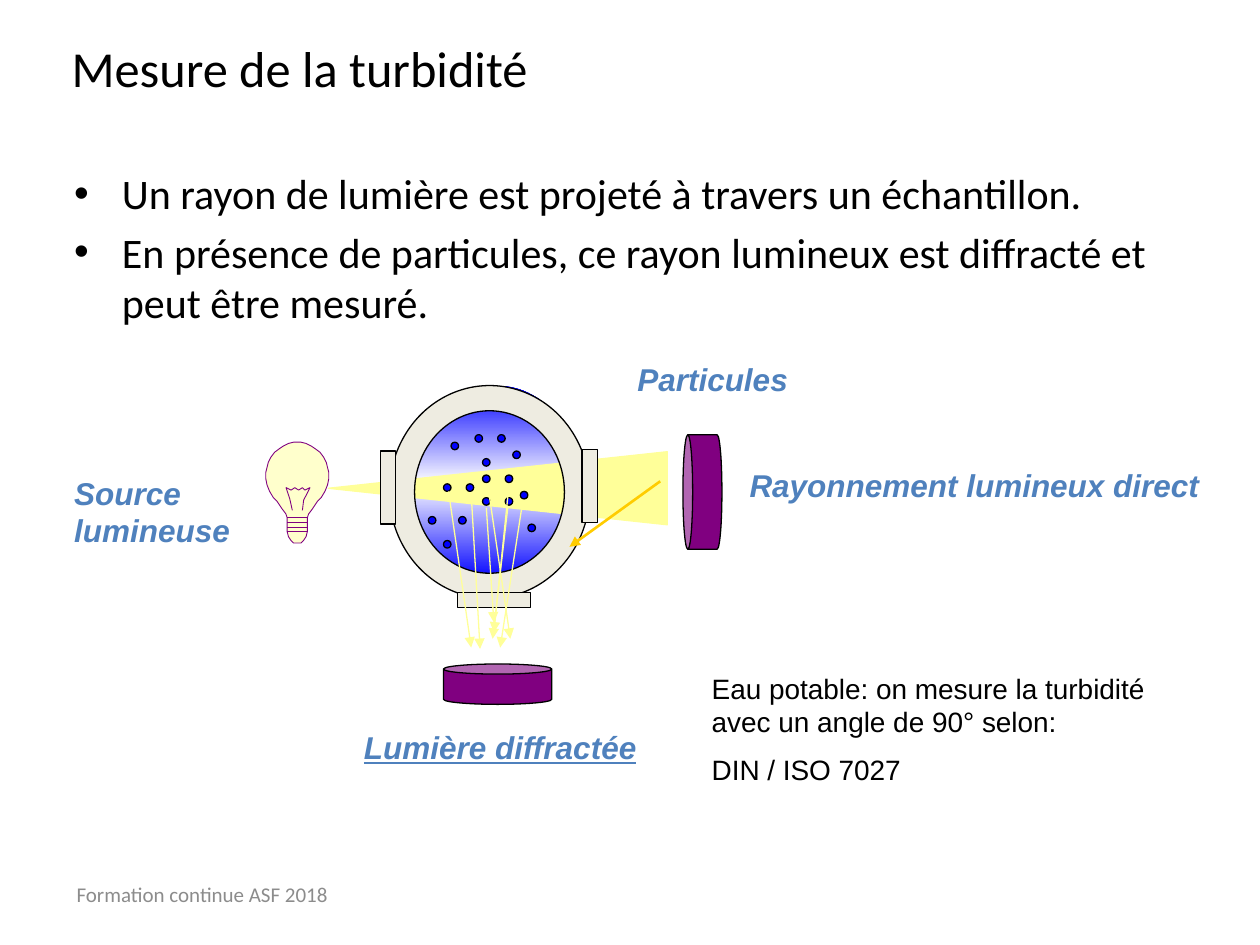
from copy import deepcopy

from lxml import etree
from pptx import Presentation
from pptx.dml.color import RGBColor
from pptx.enum import shapes, text
from pptx.oxml.ns import qn
from pptx.util import Inches, Pt

BLACK = RGBColor(0, 0, 0)
WHITE = RGBColor(255, 255, 255)
BLUE = RGBColor(0, 0, 255)
LABEL_BLUE = RGBColor(0x4F, 0x81, 0xBD)
GREY = RGBColor(0x8C, 0x8C, 0x8C)
BEIGE = RGBColor(0xEE, 0xEC, 0xE1)
LIGHT = RGBColor(0xFF, 0xFF, 0x99)
GLASS = RGBColor(0xFF, 0xFF, 0xCC)
PURPLE = RGBColor(0x80, 0, 0x80)
AMBER = RGBColor(0xFF, 0xCC, 0)
KIND = shapes.MSO_SHAPE


def add_text(slide, box, paragraphs, size, color, font="Arial", anchor=text.MSO_ANCHOR.TOP,
             wrap=True, bullet=False, gap=0, **style):
    frame = slide.shapes.add_textbox(*map(Inches, box)).text_frame
    frame.word_wrap = wrap
    frame.vertical_anchor = anchor
    for index, words in enumerate(paragraphs):
        paragraph = frame.paragraphs[0] if index == 0 else frame.add_paragraph()
        if index:
            paragraph.space_before = Pt(gap)
        if bullet:
            props = paragraph._p.get_or_add_pPr()
            props.set("marL", str(Inches(0.38)))
            props.set("indent", str(-Inches(0.38)))
            etree.SubElement(props, qn("a:buFont")).set("typeface", "Arial")
            etree.SubElement(props, qn("a:buChar")).set("char", "•")
        paragraph.text = words
        for run in paragraph.runs:
            run.font.name = font
            run.font.size = Pt(size)
            run.font.color.rgb = color
            for name, value in style.items():
                setattr(run.font, name, value)


def add_label(slide, left, top, width, height, words, underline=False):
    add_text(slide, (left, top, width, height), [words], 18, LABEL_BLUE,
             wrap=False, bold=True, italic=True, underline=underline)


def paint(shape, fill, line=BLACK, weight=0.75):
    shape.shadow.inherit = False
    if fill is None:
        shape.fill.background()
    else:
        shape.fill.solid()
        shape.fill.fore_color.rgb = fill
    shape.line.color.rgb = line
    shape.line.width = Pt(weight)


def add_shape(slide, kind, box, fill, line=BLACK, rotation=0):
    shape = slide.shapes.add_shape(kind, *map(Inches, box))
    paint(shape, fill, line)
    shape.rotation = rotation
    return shape


def add_arrow(slide, start, end, color, weight=0.75):
    arrow = slide.shapes.add_connector(shapes.MSO_CONNECTOR.STRAIGHT, *map(Inches, (*start, *end)))
    arrow.line.color.rgb = color
    arrow.line.width = Pt(weight)
    etree.SubElement(arrow.line._get_or_add_ln(), qn("a:tailEnd")).set("type", "triangle")
    etree.SubElement(arrow._element.spPr, qn("a:effectLst"))


def add_sample(slide, left, top, width, height):
    sample = slide.shapes.add_shape(KIND.OVAL, *map(Inches, (left, top, width, height)))
    sample.shadow.inherit = False
    sample.line.fill.background()
    sample.fill.gradient()
    sample.fill.gradient_angle = 90
    stop_list = next(sample._element.iter(qn("a:gsLst")))
    stop_list.append(deepcopy(stop_list[0]))
    for stop, position, color in zip(sample.fill.gradient_stops, (0, 0.5, 1), (BLUE, WHITE, BLUE)):
        stop.position = position
        stop.color.rgb = color


def draw_cell(slide, left, top, width, height):
    add_sample(slide, left + 0.19, top, 1.32, 1.55)
    add_shape(slide, KIND.ISOSCELES_TRIANGLE, (left + 0.57, top - 0.53, 0.58, 2.69),
              LIGHT, LIGHT, 270)
    ring = add_shape(slide, KIND.DONUT, (left, top, width, height), BEIGE)
    ring.adjustments[0] = 0.126
    thick, long = 0.12, 0.58
    for x, y, w, h in ((-0.07, 0.52, thick, long), (1.53, 0.51, thick, long),
                       (0.54, 1.64, long, thick)):
        add_shape(slide, KIND.RECTANGLE, (left + x, top + y, w, h), BEIGE)


def draw_particles(slide, left, top):
    rows = {0.39: (0.68, 0.86), 0.45: (0.49,), 0.52: (0.98,), 0.58: (0.74,),
            0.71: (0.74, 0.92), 0.78: (0.43, 0.61), 0.84: (1.04,), 0.89: (0.74, 0.92),
            1.04: (0.31, 0.55), 1.1: (1.1,), 1.23: (0.43,)}
    for y, columns in rows.items():
        for x in columns:
            add_shape(slide, KIND.FLOWCHART_CONNECTOR, (left + x, top + y, 0.06, 0.06), BLUE)


def draw_scattered_rays(slide, left, top):
    rays = ((0.47, 0.84, 0.65, 2.08), (0.65, 0.86, 0.72, 2.09), (1.06, 0.91, 0.88, 2.08),
            (0.94, 0.97, 0.82, 2.01), (0.77, 0.97, 0.83, 1.88), (0.95, 0.79, 0.83, 1.96),
            (0.78, 0.78, 0.96, 2.01))
    for x1, y1, x2, y2 in rays:
        add_arrow(slide, (left + x1, top + y1), (left + x2, top + y2), LIGHT)


def add_outline(slide, points, fill=None, closed=False):
    corners = [(Inches(x), Inches(y)) for x, y in points]
    builder = slide.shapes.build_freeform(*corners[0], scale=1.0)
    builder.add_line_segments(corners[1:], close=closed)
    paint(builder.convert_to_shape(), fill, PURPLE, 0.5)


def draw_bulb(slide, left, top, width):
    middle = left + width / 2
    profile = ((0.03, 0), (0.07, 0.01), (0.11, 0.03), (0.14, 0.05), (0.18, 0.08), (0.21, 0.12),
               (0.23, 0.16), (0.24, 0.2), (0.25, 0.24), (0.25, 0.29), (0.24, 0.34),
               (0.22, 0.39), (0.19, 0.44), (0.16, 0.47), (0.12, 0.53), (0.09, 0.57),
               (0.08, 0.6), (0.08, 0.71), (0.07, 0.75), (0.05, 0.78), (0.03, 0.8))
    right = [(middle + x, top + y) for x, y in profile]
    mirrored = [(middle - x, top + y) for x, y in reversed(profile)]
    add_outline(slide, right + mirrored, GLASS, True)
    filament = ((-0.04, 0.54), (-0.06, 0.45), (-0.09, 0.36), (-0.05, 0.38), (-0.02, 0.36),
                (0.01, 0.38), (0.04, 0.36), (0.06, 0.38), (0.1, 0.36), (0.05, 0.46), (0.04, 0.54))
    add_outline(slide, [(middle + x, top + y) for x, y in filament])
    for y in (0.6, 0.64, 0.68, 0.71):
        add_outline(slide, [(middle - 0.08, top + y), (middle + 0.08, top + y)])


def draw_detector(slide, left, top, width, height, rotation=0):
    add_shape(slide, KIND.CAN, (left, top, width, height), PURPLE,
              rotation=rotation).adjustments[0] = 0.25


def draw_apparatus(slide, left, top):
    draw_cell(slide, left, top, 1.59, 1.69)
    draw_particles(slide, left, top)
    draw_scattered_rays(slide, left, top)
    draw_bulb(slide, left - 0.98, top + 0.45, 0.5)
    draw_detector(slide, left + 0.43, top + 2.21, 0.86, 0.32)
    draw_detector(slide, left + 2.03, top + 0.69, 0.91, 0.31, 270)
    add_label(slide, left - 2.6, top + 0.65, 1.45, 0.71, "Source\vlumineuse")
    add_label(slide, left - 0.3, top + 2.67, 2.39, 0.4, "Lumière diffractée", underline=True)
    add_label(slide, left + 2.76, top + 0.59, 3.81, 0.4, "Rayonnement lumineux direct")
    add_label(slide, left + 1.87, top - 0.25, 1.46, 0.4, "Particules")
    add_arrow(slide, (left + 2.15, top + 0.76), (left + 1.43, top + 1.28), AMBER, 1.5)


def main():
    deck = Presentation()
    deck.slide_width, deck.slide_height = Inches(10), Inches(7.5)
    slide = deck.slides.add_slide(deck.slide_layouts[6])
    middle = text.MSO_ANCHOR.MIDDLE
    add_text(slide, (0.47, 0.23, 9, 0.61), ["Mesure de la turbidité"], 28.8, BLACK,
             font="Calibri", anchor=middle)
    add_text(slide, (0.49, 1.28, 9, 1.54),
             ["Un rayon de lumière est projeté à travers un échantillon.",
              "En présence de particules, ce rayon lumineux est diffracté et peut être mesuré."],
             24, BLACK, font="Calibri", bullet=True, gap=4.8)
    add_text(slide, (5.55, 5.28, 3.75, 1.04),
             ["Eau potable: on mesure la turbidité avec un angle de 90° selon:", "DIN / ISO 7027"],
             16, BLACK, gap=8)
    draw_apparatus(slide, 3.09, 3.06)
    add_text(slide, (0.51, 6.9, 2.83, 0.4), ["Formation continue ASF 2018"], 12, GREY,
             font="Calibri", anchor=middle)
    deck.save("out.pptx")


if __name__ == "__main__":
    main()
